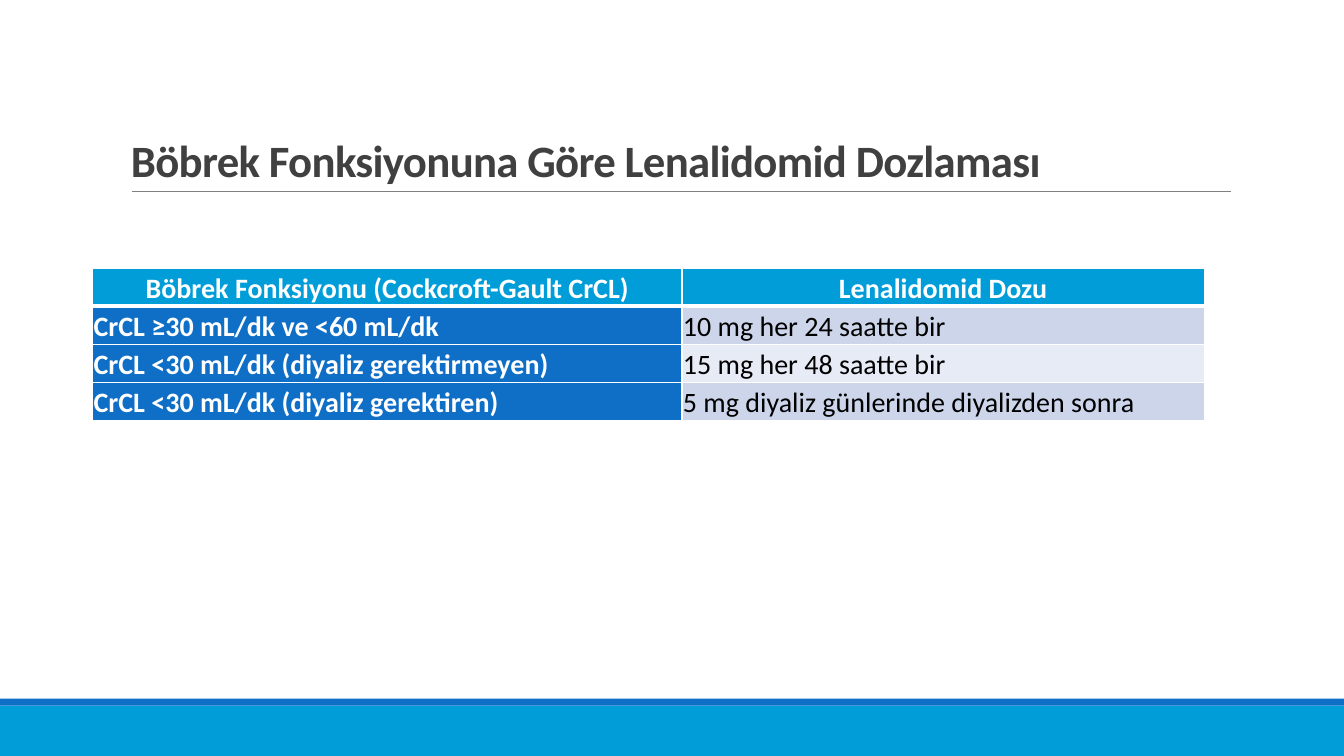
import pptx
import pptx.dml.color
import pptx.enum.shapes
import pptx.enum.text
import pptx.oxml
import pptx.oxml.ns
import pptx.util

Pt = pptx.util.Pt
RGBColor = pptx.dml.color.RGBColor
Align = pptx.enum.text.PP_ALIGN
Anchor = pptx.enum.text.MSO_ANCHOR

TITLE = "Böbrek Fonksiyonuna Göre Lenalidomid Dozlaması"
DOSING = [
    ("Böbrek Fonksiyonu (Cockcroft-Gault CrCL)", "Lenalidomid Dozu"),
    ("CrCL ≥30 mL/dk ve <60 mL/dk", "10 mg her 24 saatte bir"),
    ("CrCL <30 mL/dk (diyaliz gerektirmeyen)", "15 mg her 48 saatte bir"),
    ("CrCL <30 mL/dk (diyaliz gerektiren)", "5 mg diyaliz günlerinde diyalizden sonra"),
]

WHITE = RGBColor(0xFF, 0xFF, 0xFF)
BLACK = RGBColor(0x00, 0x00, 0x00)
TITLE_GREY = RGBColor(0x40, 0x40, 0x40)
RULE_GREY = RGBColor(0x80, 0x80, 0x80)
CYAN = RGBColor(0x00, 0x9D, 0xD9)
BLUE = RGBColor(0x0F, 0x6F, 0xC6)
BANDS = [RGBColor(0xCC, 0xD5, 0xEA), RGBColor(0xE7, 0xEB, 0xF5)]

PAGE_WIDTH, PAGE_HEIGHT = 960, 540
FOOTER_BANDS = [(504, 36, CYAN), (499, 5, BLUE)]
TABLE_LEFT, TABLE_TOP = 66.2, 191.5
COLUMN_WIDTHS = [421, 373]
ROW_HEIGHT = 27.2
CELL_MARGIN = 0.7


def write(frame, text, size=20, color=BLACK, bold=False, align=Align.LEFT,
          line_spacing=1.07, space_after=0, tracking=None):
    para = frame.paragraphs[0]
    para.alignment = align
    para.line_spacing = line_spacing
    para.space_after = Pt(space_after)
    span = para.add_run()
    span.text = text
    span.font.name = "Calibri"
    span.font.size = Pt(size)
    span.font.bold = bold
    span.font.color.rgb = color
    if tracking is not None:
        span.font._element.set("spc", str(round(tracking * 100)))


def set_border(cell, side, width):
    """Draw a white edge; call before the cell fill so the XML order is valid."""
    namespace = pptx.oxml.ns.nsdecls("a")
    cell._tc.get_or_add_tcPr().append(pptx.oxml.parse_xml(
        f'<a:{side} {namespace} w="{Pt(width)}"><a:solidFill>'
        f'<a:srgbClr val="{WHITE}"/></a:solidFill></a:{side}>'))


def add_footer(page):
    for top, height, color in FOOTER_BANDS:
        band = page.shapes.add_shape(pptx.enum.shapes.MSO_SHAPE.RECTANGLE,
                                     0, Pt(top), Pt(PAGE_WIDTH), Pt(height))
        band.shadow.inherit = False
        band.fill.solid()
        band.fill.fore_color.rgb = color
        band.line.fill.background()


def add_title(page):
    rule = page.shapes.add_connector(pptx.enum.shapes.MSO_CONNECTOR.STRAIGHT,
                                     Pt(94.2), Pt(136.8), Pt(879), Pt(136.8))
    rule.line.color.rgb = RULE_GREY
    rule.line.width = Pt(0.5)
    rule._element.spPr.append(pptx.oxml.parse_xml(
        f'<a:effectLst {pptx.oxml.ns.nsdecls("a")}/>'))
    box = page.shapes.add_textbox(Pt(86.4), Pt(22.6), Pt(792), Pt(114.2))
    box.text_frame.word_wrap = True
    box.text_frame.vertical_anchor = Anchor.BOTTOM
    write(box.text_frame, TITLE, size=32, color=TITLE_GREY, bold=True,
          line_spacing=0.85, tracking=-0.5)


def add_dosing_table(page):
    table = page.shapes.add_table(
        len(DOSING), len(COLUMN_WIDTHS), Pt(TABLE_LEFT), Pt(TABLE_TOP),
        Pt(sum(COLUMN_WIDTHS)), Pt(ROW_HEIGHT * len(DOSING))).table
    for column, width in zip(table.columns, COLUMN_WIDTHS):
        column.width = Pt(width)
    for row_index, texts in enumerate(DOSING):
        table.rows[row_index].height = Pt(ROW_HEIGHT)
        is_header = row_index == 0
        for column_index, text in enumerate(texts):
            cell = table.cell(row_index, column_index)
            is_label = column_index == 0
            strong = is_header or is_label
            cell.margin_left = cell.margin_right = Pt(CELL_MARGIN)
            cell.margin_top = cell.margin_bottom = Pt(CELL_MARGIN)
            cell.vertical_anchor = Anchor.MIDDLE
            for side in ("lnL", "lnR", "lnT", "lnB"):
                heavy = (is_header and side == "lnB") or (row_index == 1 and side == "lnT")
                set_border(cell, side, 3 if heavy else 1)
            cell.fill.solid()
            cell.fill.fore_color.rgb = (
                CYAN if is_header else BLUE if is_label else BANDS[(row_index - 1) % 2])
            write(cell.text_frame, text, color=WHITE if strong else BLACK, bold=strong,
                  align=Align.CENTER if is_header else Align.LEFT, space_after=8)


def main():
    deck = pptx.Presentation()
    deck.slide_width, deck.slide_height = Pt(PAGE_WIDTH), Pt(PAGE_HEIGHT)
    page = deck.slides.add_slide(deck.slide_layouts[6])
    add_footer(page)
    add_title(page)
    add_dosing_table(page)
    deck.save("out.pptx")


if __name__ == "__main__":
    main()
